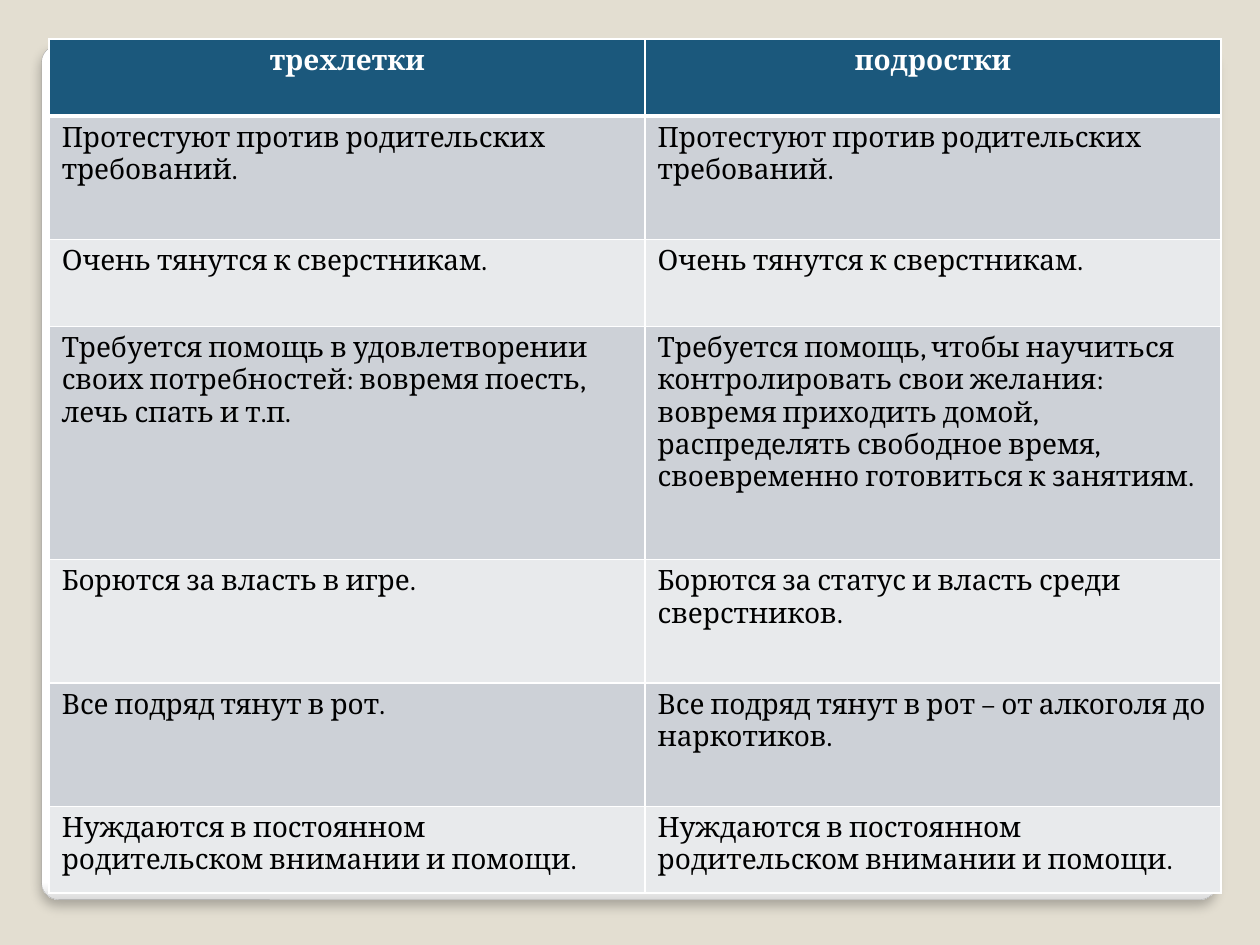
from lxml import etree
from pptx import Presentation
from pptx.dml.color import RGBColor
from pptx.enum.shapes import MSO_SHAPE
from pptx.enum.text import PP_ALIGN
from pptx.oxml import parse_xml
from pptx.util import Inches, Pt

ROUNDED = MSO_SHAPE.ROUNDED_RECTANGLE
CENTER, LEFT = PP_ALIGN.CENTER, PP_ALIGN.LEFT
NS = "http://schemas.openxmlformats.org/drawingml/2006/main"
FONT = "Cambria"
COLORS = {
    "background": "E3DED1", "panel": "FFFFFF", "panel_edge": "DADADA",
    "outline": "A4A4A4", "shadow": "000000", "border": "FFFFFF",
    "header": "1B587C", "header_text": "FFFFFF", "text": "000000",
    "odd": "CDD1D7", "even": "E8EAEC",
}

# Content: row height, then the text of each column
ROWS = [
    (0.61, "трехлетки", "подростки"),
    (0.98, "Протестуют против родительских требований.",
     "Протестуют против родительских требований."),
    (0.69, "Очень тянутся к сверстникам.", "Очень тянутся к сверстникам."),
    (1.85, "Требуется помощь в удовлетворении своих потребностей: "
     "вовремя поесть, лечь спать и т.п.",
     "Требуется помощь, чтобы научиться контролировать свои желания: "
     "вовремя приходить домой, распределять свободное время, "
     "своевременно готовиться к занятиям."),
    (0.98, "Борются за власть в игре.",
     "Борются за статус и власть среди сверстников."),
    (0.98, "Все подряд тянут в рот.",
     "Все подряд тянут в рот – от алкоголя до наркотиков."),
    (0.69, "Нуждаются в постоянном родительском внимании и помощи.",
     "Нуждаются в постоянном родительском внимании и помощи."),
]
COLUMN_WIDTHS = [4.73, 4.57]


def color(name):
    return RGBColor.from_string(COLORS[name])


def add_shadow(shape):
    for old in shape._element.spPr.findall(f"{{{NS}}}effectLst"):
        shape._element.spPr.remove(old)
    shape._element.spPr.append(parse_xml(
        f'<a:effectLst xmlns:a="{NS}"><a:outerShdw blurRad="{Pt(6)}" '
        f'dist="{Pt(4)}" dir="5400000" algn="t" rotWithShape="0">'
        f'<a:srgbClr val="{COLORS["shadow"]}"><a:alpha val="25000"/>'
        '</a:srgbClr></a:outerShdw></a:effectLst>'))


def set_borders(cell, bottom):
    # Border lines come before the fill in the cell properties
    tcPr = cell._tc.get_or_add_tcPr()
    widths = {"lnL": 1, "lnR": 1, "lnT": 1, "lnB": bottom}
    for i, (tag, width) in enumerate(widths.items()):
        ln = etree.Element(f"{{{NS}}}{tag}", w=str(Pt(width)))
        fill = etree.SubElement(ln, f"{{{NS}}}solidFill")
        etree.SubElement(fill, f"{{{NS}}}srgbClr", val=COLORS["border"])
        tcPr.insert(i, ln)


prs = Presentation()
prs.slide_width, prs.slide_height = Inches(10), Inches(7.5)
s = prs.slides.add_slide(prs.slide_layouts[6])
s.background.fill.solid()
s.background.fill.fore_color.rgb = color("background")

# Rounded panel behind the table
panel = s.shapes.add_shape(ROUNDED, Inches(0.33), Inches(0.36),
                           Inches(9.33), Inches(6.78))
panel.adjustments[0] = 0.02
panel.fill.gradient()
panel.fill.gradient_angle = 270
for stop, position, name in zip(panel.fill.gradient_stops, (0.98, 1),
                                ("panel", "panel_edge")):
    stop.position = position
    stop.color.rgb = color(name)
panel.line.color.rgb = color("outline")
panel.line.width = Pt(0.16)
add_shadow(panel)

# Comparison table
table = s.shapes.add_table(
    len(ROWS), len(COLUMN_WIDTHS), Inches(0.39), Inches(0.31),
    Inches(sum(COLUMN_WIDTHS)), Inches(sum(row[0] for row in ROWS))).table
for column, width in zip(table.columns, COLUMN_WIDTHS):
    column.width = Inches(width)
for r, (height, *texts) in enumerate(ROWS):
    table.rows[r].height = Inches(height)
    header = r == 0
    fill_name = "header" if header else ("odd" if r % 2 else "even")
    for c, text in enumerate(texts):
        cell = table.cell(r, c)
        cell.fill.solid()
        cell.fill.fore_color.rgb = color(fill_name)
        set_borders(cell, 3 if header else 1)
        cell.text = text
        p = cell.text_frame.paragraphs[0]
        p.alignment = CENTER if header else LEFT
        p.font.name, p.font.size, p.font.bold = FONT, Pt(16), header
        p.font.color.rgb = color("header_text" if header else "text")

prs.save("out.pptx")
